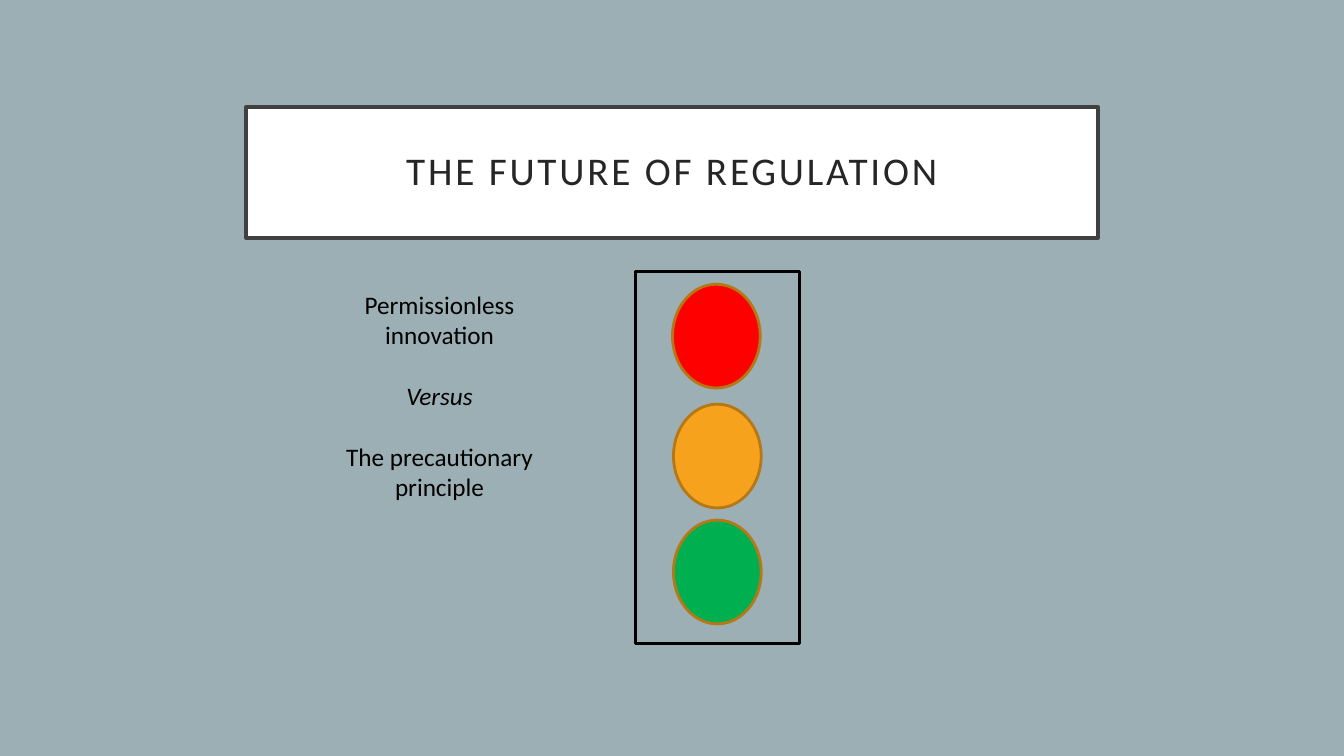
from pptx import Presentation
from pptx import util as u
from pptx.dml.color import RGBColor
from pptx.enum import shapes, text

COLORS = {
    "background": "9BAFB5", "white": "FFFFFF", "black": "000000",
    "title_line": "404040", "title_text": "262626", "light_line": "B67815",
    "red": "FF0000", "amber": "F6A21D", "green": "00B050",
}
FONT = "Calibri"


def rgb(name):
    return RGBColor.from_string(COLORS[name])


def write(p, words, size=18, color="black", italic=False, spacing=0, before=0, line=None):
    """Fill a centred paragraph; spacing (letters) and before are in points."""
    p.alignment = text.PP_ALIGN.CENTER
    p.space_before = u.Pt(before)
    if line:
        p.line_spacing = line
    r = p.add_run()
    r.text = words
    r.font.name = FONT
    r.font.size = u.Pt(size)
    r.font.italic = italic
    r.font.color.rgb = rgb(color)
    if spacing:
        r.font._element.set("spc", str(spacing * 100))


class Deck:
    """Holds the presentation style and the current slide."""

    def __init__(self, prs):
        self.s = prs.slides.add_slide(prs.slide_layouts[5])
        self.s.background.fill.solid()
        self.s.background.fill.fore_color.rgb = rgb("background")

    def paint(self, sp, fill, line, width):
        sp.fill.solid()
        sp.fill.fore_color.rgb = rgb(fill)
        sp.line.color.rgb = rgb(line)
        sp.line.width = u.Pt(width)

    def title(self, words, x, y, w, h):
        sp = self.s.shapes.title
        sp.left, sp.top, sp.width, sp.height = map(u.Inches, (x, y, w, h))
        self.paint(sp, "white", "title_line", 2.5)
        tf = sp.text_frame
        tf.word_wrap = True
        tf.auto_size = text.MSO_AUTO_SIZE.NONE
        tf.vertical_anchor = text.MSO_ANCHOR.MIDDLE
        tf.margin_left = tf.margin_right = u.Inches(0.2)
        tf.margin_top = tf.margin_bottom = u.Inches(0.2)
        write(tf.paragraphs[0], words, size=28, color="title_text", spacing=2, line=0.9)

    def shape(self, kind, x, y, w, h, fill, line):
        sp = self.s.shapes.add_shape(kind, *map(u.Inches, (x, y, w, h)))
        sp.shadow.inherit = False
        self.paint(sp, fill, line, 2)

    def textbox(self, paragraphs, x, y, w, h):
        tf = self.s.shapes.add_textbox(*map(u.Inches, (x, y, w, h))).text_frame
        tf.word_wrap = True
        tf.auto_size = text.MSO_AUTO_SIZE.SHAPE_TO_FIT_TEXT
        for i, (words, style) in enumerate(paragraphs):
            p = tf.add_paragraph() if i else tf.paragraphs[0]
            write(p, words, **style)


def main():
    prs = Presentation()
    prs.slide_width, prs.slide_height = u.Inches(13.33), u.Inches(7.5)
    deck = Deck(prs)
    deck.title("THE FUTURE OF REGULATION", 2.44, 1.06, 8.45, 1.3)

    deck.shape(shapes.MSO_SHAPE.RECTANGLE, 6.3, 2.69, 1.63, 3.69, "background", "black")
    for color, x, y in (("red", 6.67, 2.82), ("amber", 6.68, 4.01), ("green", 6.68, 5.16)):
        deck.shape(shapes.MSO_SHAPE.OVAL, x, y, 0.87, 1.03, color, "light_line")

    gap = 22
    deck.textbox([
        ("Permissionless innovation", {}),
        ("Versus", {"italic": True, "before": gap}),
        ("The precautionary principle", {"before": gap}),
    ], 3.11, 2.82, 2.5, 2.2)
    prs.save("out.pptx")


if __name__ == "__main__":
    main()
